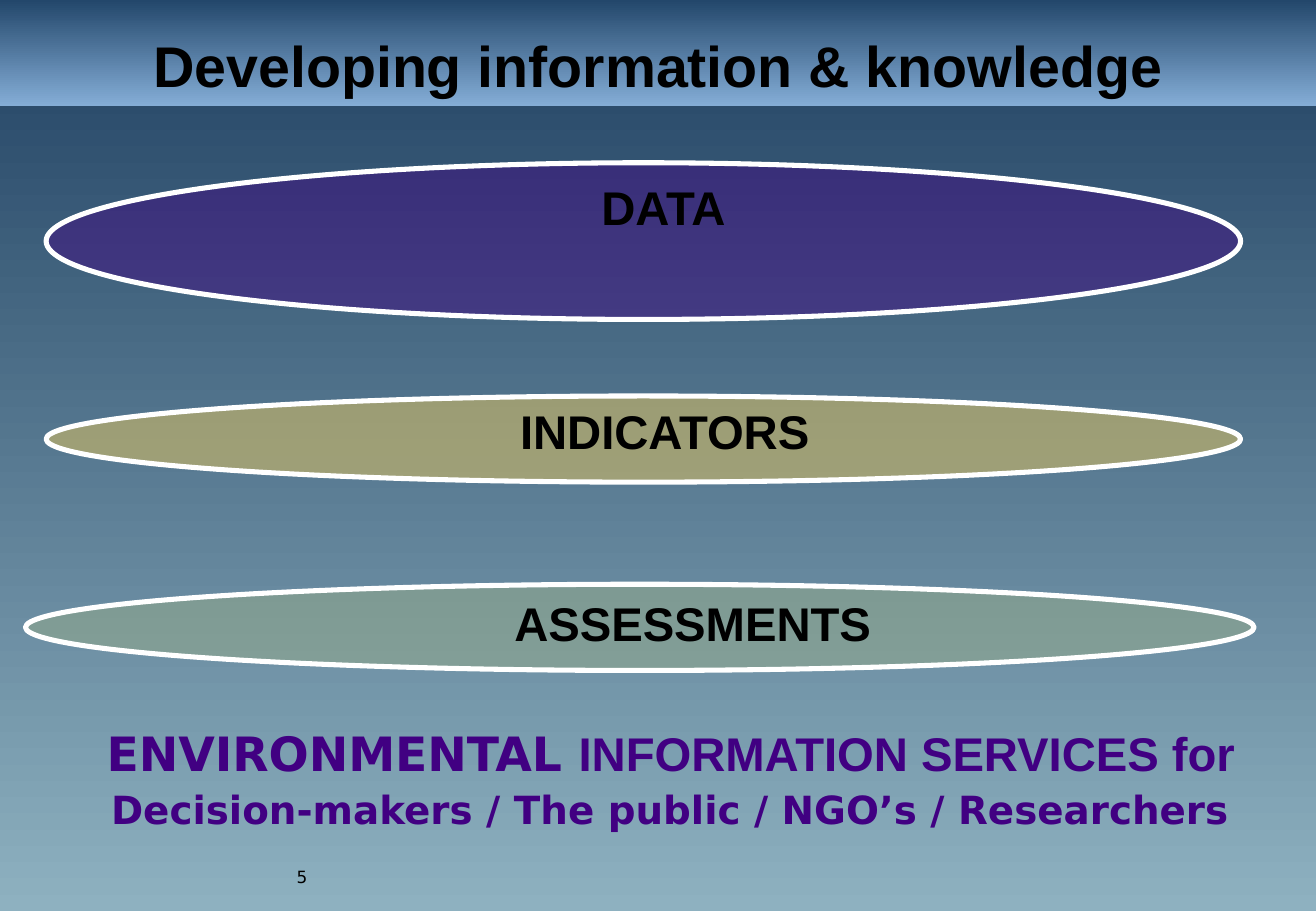
from lxml.etree import SubElement
from pptx import Presentation
from pptx.dml.color import RGBColor
from pptx.enum.shapes import MSO_SHAPE as Shape
from pptx.enum.text import MSO_ANCHOR as Anchor, PP_ALIGN as Align
from pptx.oxml.ns import qn
from pptx.util import Inches, Pt

WIDTH, HEIGHT = 10.83, 7.5
BLACK, WHITE, PURPLE = "000000", "FFFFFF", "410082"
SANS, WIDE = "Arial", "DejaVu Sans"


def colour(value):
    return RGBColor.from_string(value)


def lengths(box):
    return [Inches(value) for value in box]


def set_gradient(fill, top, bottom):
    fill.gradient()
    fill.gradient_angle = 270
    for stop, position, value in zip(fill.gradient_stops, (0, 1), (top, bottom)):
        stop.position = position
        stop.color.rgb = colour(value)


def add_text(page, box, spans, size, ink=BLACK, bold=True,
             align=Align.CENTER, anchor=Anchor.TOP, side=0.1):
    frame = page.shapes.add_textbox(*lengths(box)).text_frame
    layout = {"word_wrap": True, "vertical_anchor": anchor,
              "margin_left": Inches(side), "margin_right": Inches(side)}
    for name, value in layout.items():
        setattr(frame, name, value)
    para = frame.paragraphs[0]
    para.alignment = align
    for text, face in spans:
        span = para.add_run()
        span.text = text
        for name, value in {"name": face, "size": Pt(size), "bold": bold}.items():
            setattr(span.font, name, value)
        span.font.color.rgb = colour(ink)


def add_header(page, box, title):
    left, top, width, height = box
    band = page.shapes.add_shape(Shape.RECTANGLE, *lengths(box))
    band.shadow.inherit = False
    band.line.fill.background()
    set_gradient(band.fill, "23476B", "84ADD6")
    add_text(page, (left + 0.54, top, width - 1.08, height + 0.2),
             [(title, SANS)], 34, anchor=Anchor.MIDDLE)


def add_level(page, box, label, tint, opacity, label_centre, label_drop):
    left, top, width, height = box
    ellipse = page.shapes.add_shape(Shape.OVAL, *lengths(box))
    ellipse.shadow.inherit = False
    ellipse.fill.solid()
    ellipse.fill.fore_color.rgb = colour(tint)
    solid = ellipse.fill._xPr.find(qn("a:solidFill"))
    SubElement(solid[0], qn("a:alpha"), val=str(opacity * 1000))
    ellipse.line.color.rgb = colour(WHITE)
    ellipse.line.width = Pt(3)
    label_width = 4
    add_text(page, (label_centre - label_width / 2, top + label_drop, label_width, 0.57),
             [(label, SANS)], 28)


def add_services(page, box):
    left, top, width, height = box
    add_text(page, (left, top, width, 0.57),
             [("ENVIRONMENTAL ", WIDE), ("INFORMATION SERVICES for", SANS)], 28, PURPLE)
    add_text(page, (left, top + 0.51, width, height - 0.51),
             [("Decision-makers / The public / NGO’s / Researchers", WIDE)], 23, PURPLE)


def add_page_number(page, box, number):
    add_text(page, box, [(number, WIDE)], 10, bold=False,
             align=Align.RIGHT, anchor=Anchor.BOTTOM, side=0)


def main():
    deck = Presentation()
    deck.slide_width, deck.slide_height = Inches(WIDTH), Inches(HEIGHT)
    page = deck.slides.add_slide(deck.slide_layouts[6])
    set_gradient(page.background.fill, "204162", "8EB1C0")
    add_header(page, (0, 0, WIDTH, 0.87), "Developing information & knowledge")
    levels = [
        ((0.38, 1.34, 9.83, 1.29), "DATA", PURPLE, 44, 5.46, 0.08),
        ((0.38, 3.26, 9.83, 0.71), "INDICATORS", "CEB966", 60, 5.47, 0),
        ((0.21, 4.81, 10.11, 0.71), "ASSESSMENTS", "9CB084", 43, 5.7, 0.03),
    ]
    for level in levels:
        add_level(page, *level)
    add_services(page, (0.21, 5.91, 10.62, 0.99))
    add_page_number(page, (0, 6.95, 2.53, 0.4), "5")
    deck.save("out.pptx")


if __name__ == "__main__":
    main()
